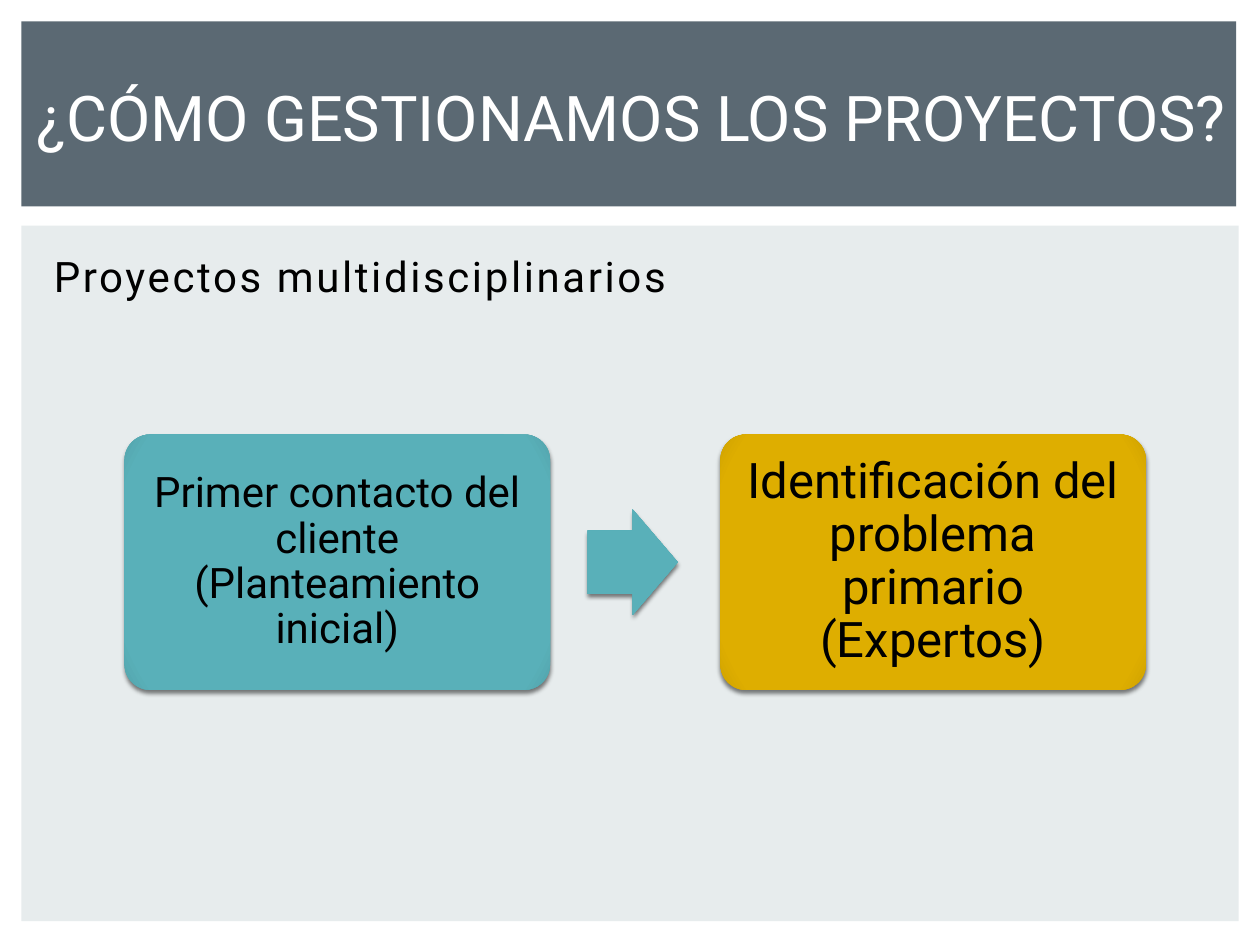
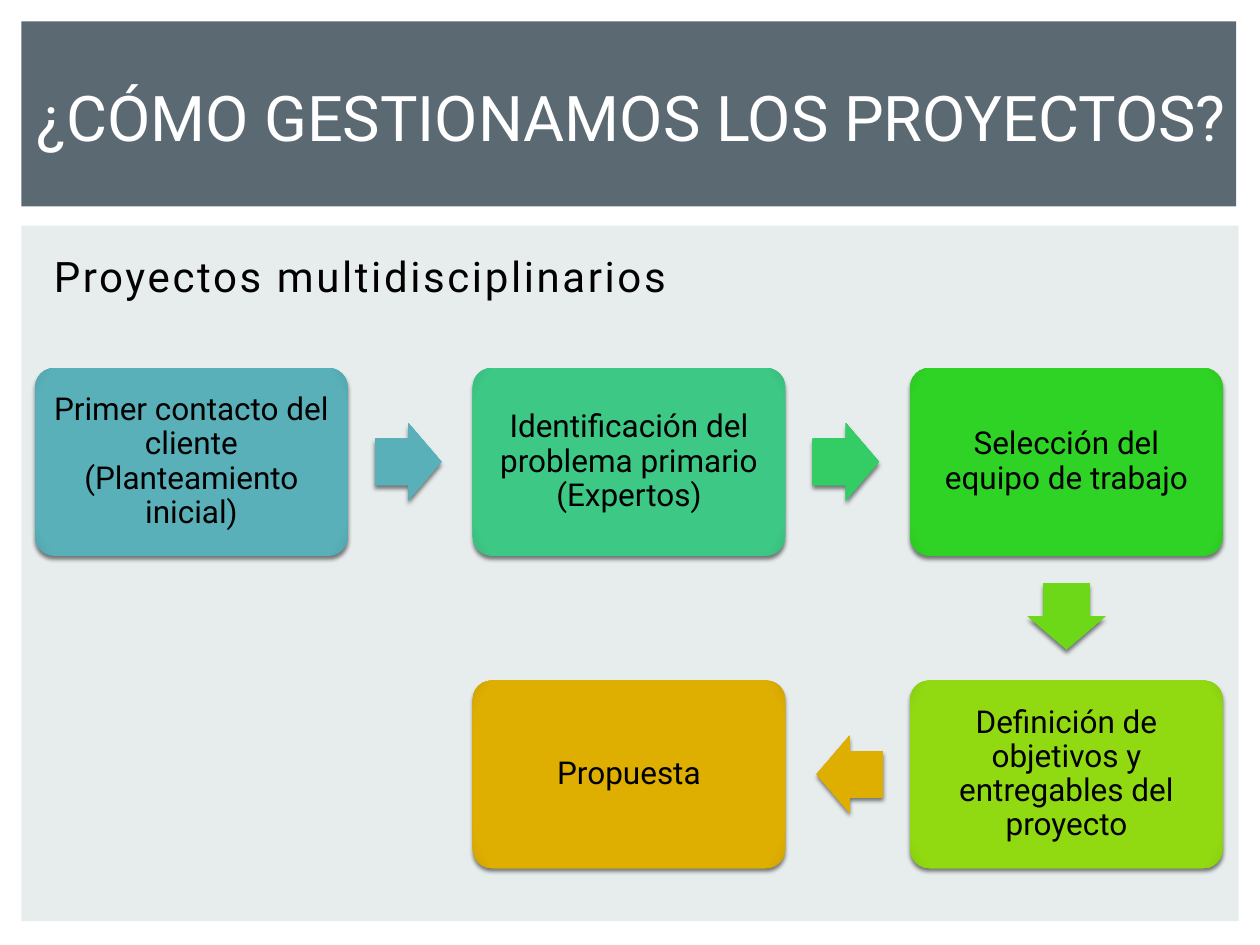
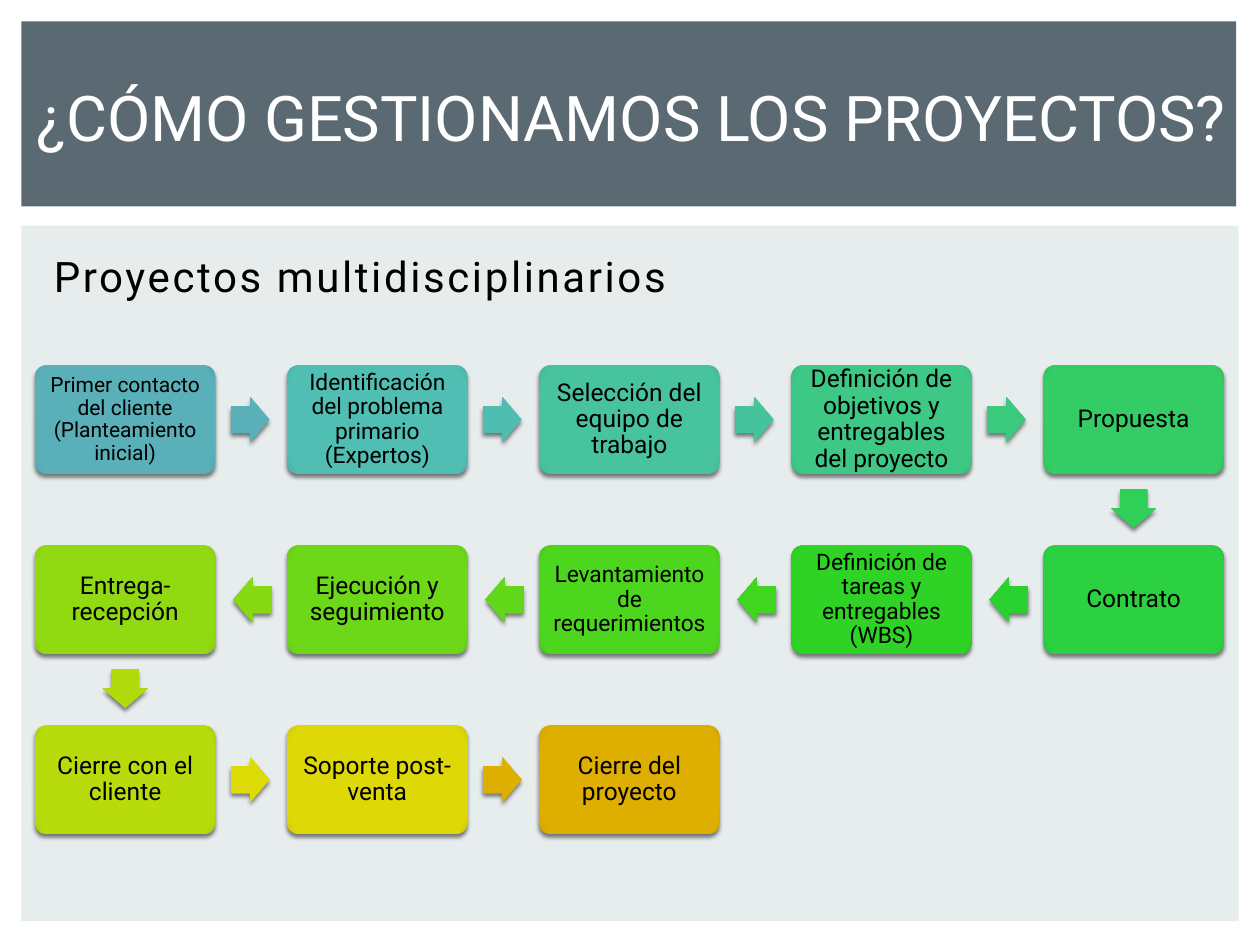
from dataclasses import dataclass

from lxml import etree
from pptx import Presentation
from pptx import util as u
from pptx.dml.color import RGBColor
from pptx.enum import shapes, text
from pptx.oxml import parse_xml

NS = 'xmlns:a="http://schemas.openxmlformats.org/drawingml/2006/main"'
A = "{http://schemas.openxmlformats.org/drawingml/2006/main}"


@dataclass(frozen=True)
class Theme:
    """Colours, font and type sizes of the deck."""
    font: str = "Roboto"
    band: str = "5B6973"
    panel: str = "E7ECED"
    light: str = "FFFFFF"
    ink: str = "000000"
    title: int = 36
    body: int = 24


T = Theme()
TITLE = "¿CÓMO GESTIONAMOS LOS PROYECTOS?"
SUBTITLE = "Proyectos multidisciplinarios"

CONTACT = "Primer contacto del cliente (Planteamiento inicial)"
PROBLEM = "Identificación del problema primario (Expertos)"
TEAM = "Selección del equipo de trabajo"
GOALS = "Definición de objetivos y entregables del proyecto"
PROPOSAL = "Propuesta"

# Each step: text, size, box colour, colour of the arrow that leads to it.
START = [
    (CONTACT, 24, "59B0B9", None),
    (PROBLEM, 28, "DEAE00", "59B0B9"),
]
PLANNING = [
    (CONTACT, 18, "59B0B9", None),
    (PROBLEM, 18, "3DC885", "59B0B9"),
    (TEAM, 18, "2FD325", "34CD65"),
    (GOALS, 18, "91DA11", "6DD818"),
    (PROPOSAL, 18, "DEAE00", "DEAE00"),
]
FULL = [
    (CONTACT, 12, "59B0B9", None),
    (PROBLEM, 13, "50BEB3", "59B0B9"),
    (TEAM, 14, "47C39E", "4FBEB1"),
    (GOALS, 14, "3DC885", "45C39A"),
    (PROPOSAL, 14, "34CD65", "3BC97D"),
    ("Contrato", 14, "2CD141", "30CF58"),
    ("Definición de tareas y entregables (WBS)", 13, "2FD325", "29D230"),
    ("Levantamiento de requerimientos", 13, "4DD61E", "3FD521"),
    ("Ejecución y seguimiento", 14, "6DD818", "61D71A"),
    ("Entrega-recepción", 14, "91DA11", "87D913"),
    ("Cierre con el cliente", 14, "B8DB0B", "B1DB0C"),
    ("Soporte post-venta", 14, "DDD806", "DDDB06"),
    ("Cierre del proyecto", 14, "DEAE00", "DEAE00"),
]


def add_run(p, words, size, colour):
    """Append a run in the theme font and return it."""
    r = p.add_run()
    r.text = words
    r.font.name = T.font
    r.font.size = u.Pt(size)
    r.font.color.rgb = RGBColor.from_string(colour)
    return r


def place(sp, left, top, width, height):
    """Move and size a shape, in centimetres."""
    sp.left, sp.top = u.Cm(left), u.Cm(top)
    sp.width, sp.height = u.Cm(width), u.Cm(height)


def add_band(slide, colour, left, top, width, height):
    """Put a flat rectangle behind everything on the slide."""
    sp = slide.shapes.add_shape(shapes.MSO_SHAPE.RECTANGLE, 0, 0, 0, 0)
    place(sp, left, top, width, height)
    sp.shadow.inherit = False
    sp.fill.solid()
    sp.fill.fore_color.rgb = RGBColor.from_string(colour)
    sp.line.fill.background()
    slide.shapes.element.insert(2, sp.element)


def add_relief(sp, colour):
    """Give a shape a darkened rim, no outline and a soft shadow."""
    rim = "".join(f"{round(c * 0.932):02X}" for c in bytes.fromhex(colour))
    stops = "".join(
        f'<a:gs pos="{pos}"><a:srgbClr val="{c}"/></a:gs>'
        for pos, c in ((0, colour), (90000, colour), (100000, rim)))
    sp.line.fill.background()
    ln = sp.element.spPr.find(A + "ln")
    ln.addprevious(parse_xml(
        f'<a:gradFill {NS} rotWithShape="1"><a:gsLst>{stops}</a:gsLst>'
        '<a:path path="circle"><a:fillToRect l="100000" t="100000" '
        'r="100000" b="100000"/></a:path></a:gradFill>'))
    ln.addnext(parse_xml(
        f'<a:effectLst {NS}><a:outerShdw blurRad="31750" dist="25400" '
        'dir="5400000" rotWithShape="0"><a:srgbClr val="000000">'
        '<a:alpha val="50000"/></a:srgbClr></a:outerShdw></a:effectLst>'))


def add_step(slide, cx, cy, width, words, size, colour):
    """Add a rounded box with centred text around a centre point."""
    sp = slide.shapes.add_shape(shapes.MSO_SHAPE.ROUNDED_RECTANGLE, 0, 0, 0, 0)
    place(sp, cx - width / 2, cy - 0.3 * width, width, 0.6 * width)
    sp.adjustments[0] = 0.1
    add_relief(sp, colour)
    tf = sp.text_frame
    tf.word_wrap = True
    tf.vertical_anchor = text.MSO_ANCHOR.MIDDLE
    inset = u.Pt(size * 0.3)
    tf.margin_left = tf.margin_right = inset
    tf.margin_top = tf.margin_bottom = inset
    p = tf.paragraphs[0]
    p.alignment = text.PP_ALIGN.CENTER
    p.line_spacing = 0.9
    add_run(p, words, size, T.ink)


def add_arrow(slide, cx, cy, width, angle, colour):
    """Add a block arrow around a centre point, scaled to the box width."""
    sp = slide.shapes.add_shape(shapes.MSO_SHAPE.RIGHT_ARROW, 0, 0, 0, 0)
    length, depth = 0.212 * width, 0.248 * width
    place(sp, cx - length / 2, cy - depth / 2, length, depth)
    sp.adjustments[0], sp.adjustments[1] = 0.6, 0.5
    sp.rotation = angle
    add_relief(sp, colour)


def add_flow(slide, steps, cols, left, top, width):
    """Lay steps out row by row, turning back at the end of each row."""
    previous = None
    for i, (words, size, colour, arrow) in enumerate(steps):
        row, col = divmod(i, cols)
        if row % 2:
            col = cols - 1 - col
        cx = left + (0.5 + 1.4 * col) * width
        cy = top + (0.3 + row) * width
        if previous:
            px, py, prow, pcol = previous
            if row > prow:
                add_arrow(slide, px, py + 0.494 * width, width, 90, arrow)
            else:
                way = col - pcol
                add_arrow(slide, px + way * 0.694 * width, py, width,
                          0 if way > 0 else 180, arrow)
        add_step(slide, cx, cy, width, words, size, colour)
        previous = cx, cy, row, col


def add_base(prs):
    """Add a slide with its bands, title and subtitle."""
    slide = prs.slides.add_slide(prs.slide_layouts[1])
    add_band(slide, T.panel, 0.43, 4.55, 24.54, 14.02)
    add_band(slide, T.band, 0.43, 0.43, 24.49, 3.73)

    title, body = slide.placeholders
    place(title, 0.03, 0.53, 25.4, 3.61)
    title.text_frame.vertical_anchor = text.MSO_ANCHOR.MIDDLE
    p = title.text_frame.paragraphs[0]
    p.alignment = text.PP_ALIGN.CENTER
    add_run(p, TITLE, T.title, T.light)

    place(body, 0.71, 4.93, 22.86, 1.5)
    p = body.text_frame.paragraphs[0]
    pPr = p._p.get_or_add_pPr()
    pPr.set("marL", str(u.Cm(0.76)))
    pPr.set("indent", str(u.Cm(-0.64)))
    etree.SubElement(pPr, A + "buNone")
    r = add_run(p, SUBTITLE, T.body, T.ink)
    r._r.get_or_add_rPr().set("spc", "150")
    return slide


def main():
    """Build the three slides and save them."""
    prs = Presentation()
    prs.slide_width, prs.slide_height = u.Cm(25.4), u.Cm(19.05)
    add_flow(add_base(prs), START, 2, 2.51, 8.76, 8.58)
    add_flow(add_base(prs), PLANNING, 3, 0.71, 7.42, 6.3)
    add_flow(add_base(prs), FULL, 5, 0.71, 7.37, 3.63)
    prs.save("out.pptx")


if __name__ == "__main__":
    main()
